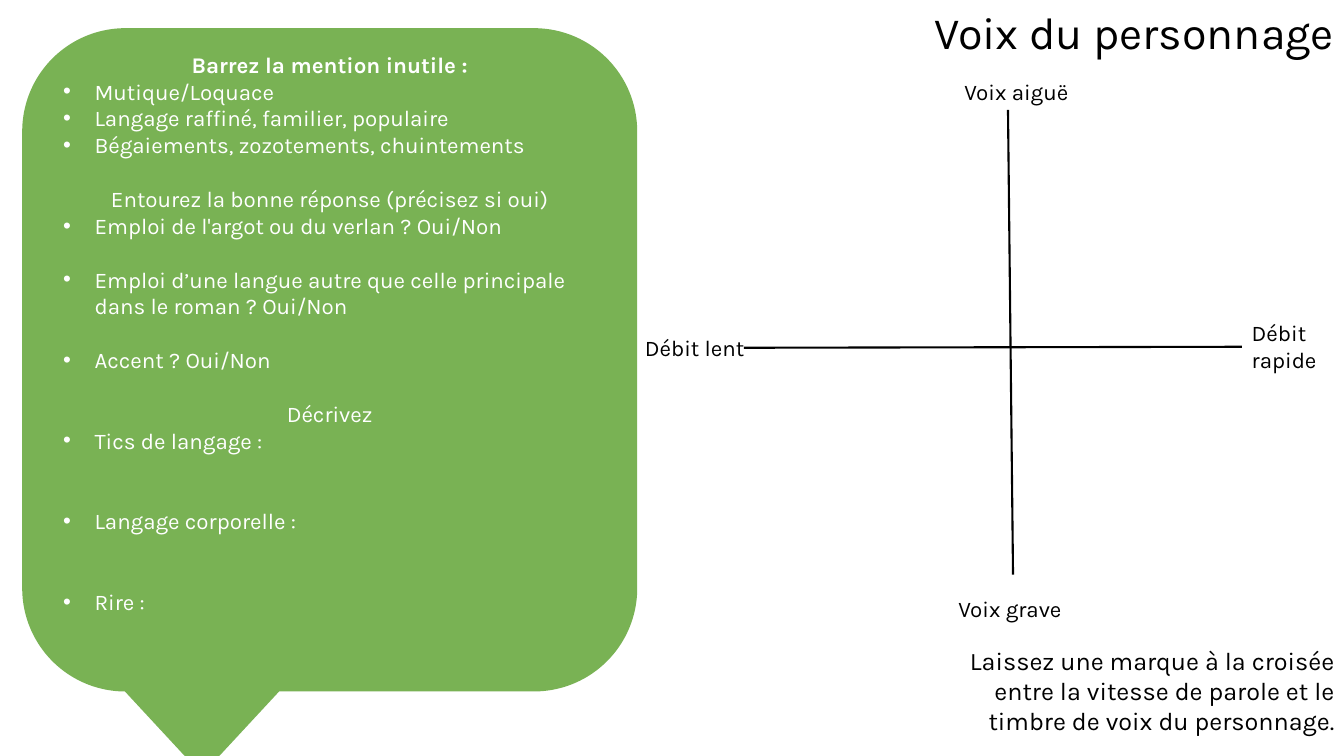
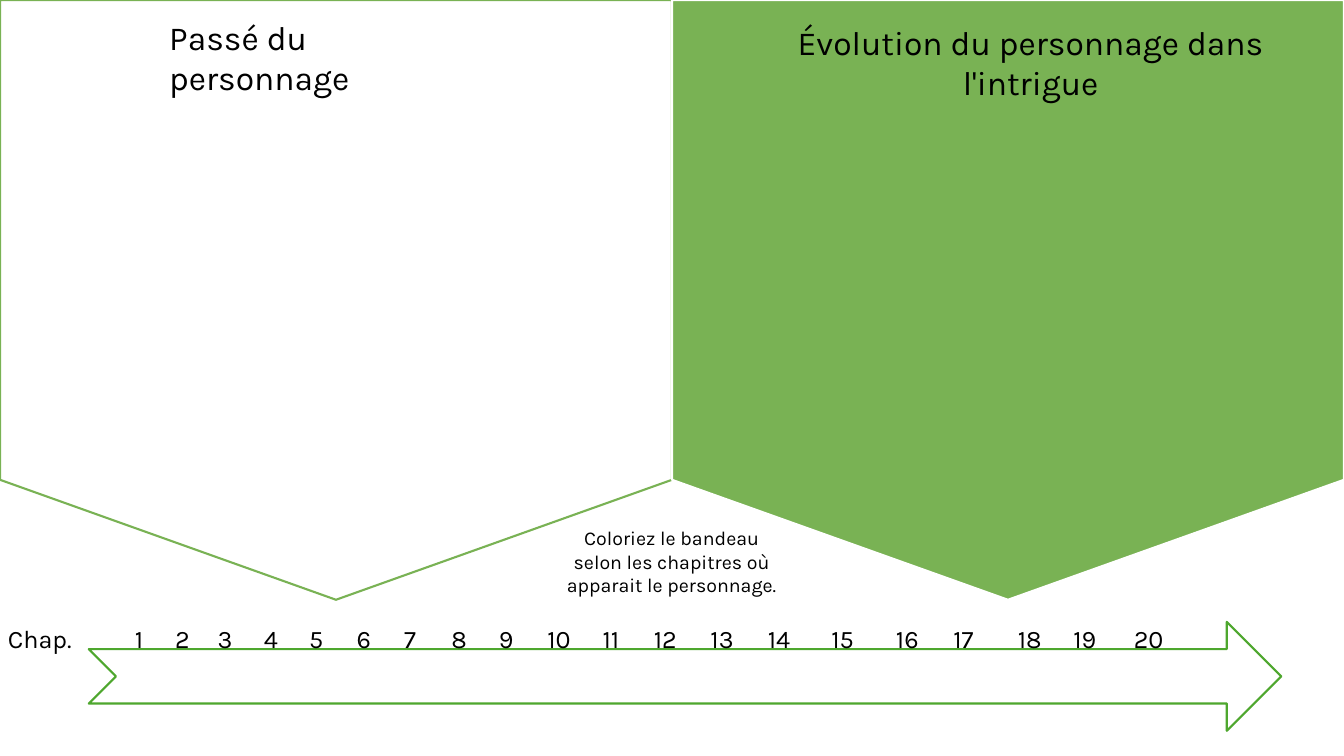
import dataclasses

import lxml.etree
import pptx
import pptx.dml.color
import pptx.enum.shapes
import pptx.enum.text
import pptx.oxml.ns
import pptx.util

Pt = pptx.util.Pt
Shape = pptx.enum.shapes.MSO_SHAPE
Align = pptx.enum.text.PP_ALIGN
Anchor = pptx.enum.text.MSO_ANCHOR


@dataclasses.dataclass(frozen=True)
class Theme:
    font: str = "Karla"
    ink: str = "000000"
    paper: str = "FFFFFF"
    green: str = "79B254"
    arrow_green: str = "4EA72E"
    title: int = 32
    heading: int = 24
    body: int = 18
    label: int = 16
    note: int = 14
    line: float = 1.5
    indent: float = 22.5
    line_pitch: float = 19.2


@dataclasses.dataclass(frozen=True)
class Box:
    left: float
    top: float
    width: float
    height: float

    def inside(self, left, top, width, height):
        return Box(self.left + left, self.top + top, width, height)

    def lengths(self):
        return Pt(self.left), Pt(self.top), Pt(self.width), Pt(self.height)


THEME = Theme()
PAGE = Box(0, 0, 960, 540)

QUESTIONS = [
    ("heading", "Barrez la mention inutile :", 0),
    ("bullet", "Mutique/Loquace", 0),
    ("bullet", "Langage raffiné, familier, populaire", 0),
    ("bullet", "Bégaiements, zozotements, chuintements", 0),
    ("center", "Entourez la bonne réponse (précisez si oui)", 1),
    ("bullet", "Emploi de l'argot ou du verlan ? Oui/Non", 0),
    ("bullet", "Emploi d’une langue autre que celle principale dans le roman ? Oui/Non", 1),
    ("bullet", "Accent ? Oui/Non", 1),
    ("center", "Décrivez", 1),
    ("bullet", "Tics de langage :", 0),
    ("bullet", "Langage corporelle :", 2),
    ("bullet", "Rire :", 2),
]
ANSWER_LINES = 2

AXIS_LABELS = [
    ("Voix aiguë", 228.2, 52.6, 88.56),
    ("Voix grave", 223.9, 421.9, 88.56),
    ("Débit rapide", 433.4, 224.6, 68.4),
    ("Débit lent", 0, 235.4, 88.56),
]

CHAPTER_LEFTS = [
    89.3, 118, 148.3, 181.4, 213.8, 247.7, 281.5, 315.4, 349.2, 383.8,
    423.4, 460, 500.4, 541.4, 586.8, 632.9, 673.9, 720, 759.6, 802.8,
]


def rgb(color):
    return pptx.dml.color.RGBColor.from_string(color)


def add_span(para, text, size, color, bold=False):
    span = para.add_run()
    span.text = text
    span.font.name = THEME.font
    span.font.size = Pt(size)
    span.font.color.rgb = rgb(color)
    span.font.bold = bold


def add_text(page, box, text, size, align=Align.LEFT):
    frame = page.shapes.add_textbox(*box.lengths()).text_frame
    frame.word_wrap = True
    para = frame.paragraphs[0]
    para.alignment = align
    add_span(para, text, size, THEME.ink)


def add_figure(page, kind, box, fill, line):
    figure = page.shapes.add_shape(kind, *box.lengths())
    figure.shadow.inherit = False
    figure.fill.solid()
    figure.fill.fore_color.rgb = rgb(fill)
    figure.line.color.rgb = rgb(line)
    figure.line.width = Pt(THEME.line)
    return figure


def add_line(page, box, start, end):
    line = page.shapes.add_connector(
        pptx.enum.shapes.MSO_CONNECTOR.STRAIGHT,
        Pt(box.left + start[0]), Pt(box.top + start[1]),
        Pt(box.left + end[0]), Pt(box.top + end[1]))
    line.line.color.rgb = rgb(THEME.ink)
    line.line.width = Pt(THEME.line)
    properties = line._element.spPr
    lxml.etree.SubElement(properties, pptx.oxml.ns.qn("a:effectLst"))


def set_bullet(para):
    properties = para._p.get_or_add_pPr()
    properties.set("marL", str(Pt(THEME.indent)))
    properties.set("indent", str(-Pt(THEME.indent)))
    font = lxml.etree.SubElement(properties, pptx.oxml.ns.qn("a:buFont"))
    font.set("typeface", "Arial")
    bullet = lxml.etree.SubElement(properties, pptx.oxml.ns.qn("a:buChar"))
    bullet.set("char", "•")


def draw_questions(page, box):
    bubble = add_figure(page, Shape.ROUNDED_RECTANGULAR_CALLOUT, box, THEME.green, THEME.green)
    frame = bubble.text_frame
    frame.word_wrap = True
    frame.vertical_anchor = Anchor.MIDDLE
    frame.margin_bottom = Pt(3.6 + ANSWER_LINES * THEME.line_pitch)
    for index, (style, text, lines_before) in enumerate(QUESTIONS):
        para = frame.add_paragraph() if index else frame.paragraphs[0]
        para.alignment = Align.LEFT if style == "bullet" else Align.CENTER
        para.space_before = Pt(lines_before * THEME.line_pitch)
        if style == "bullet":
            set_bullet(para)
        add_span(para, text, THEME.label, THEME.paper, style == "heading")


def draw_voice_axes(page, box):
    add_line(page, box, (77.8, 248.4), (433.4, 247.7))
    add_line(page, box, (270, 410.4), (266.4, 78.5))
    for text, left, top, width in AXIS_LABELS:
        add_text(page, box.inside(left, top, width, 26.6), text, THEME.label)


def draw_voice_heading(page, box):
    add_text(page, box.inside(0, 0, box.width, 46), "Voix du personnage",
             THEME.title, Align.RIGHT)
    add_text(page, box.inside(0, 457.2, box.width, 72.7),
             "Laissez une marque à la croisée entre la vitesse de parole "
             "et le timbre de voix du personnage.", THEME.body, Align.RIGHT)


def draw_panel(page, box, fill, line, title, title_box, align):
    add_figure(page, Shape.FLOWCHART_OFFPAGE_CONNECTOR, box, fill, line)
    add_text(page, box.inside(*title_box), title, THEME.heading, align)


def draw_chapter_band(page, box):
    add_figure(page, Shape.NOTCHED_RIGHT_ARROW, box.inside(63.4, 2.2, 851.8, 77.8),
               THEME.paper, THEME.arrow_green)
    add_text(page, box.inside(-1.4, 0, 64, 28.8), "Chap.", THEME.body)
    for number, left in enumerate(CHAPTER_LEFTS, 1):
        width = 26 if number < 10 else 46
        add_text(page, box.inside(left, 0, width, 28.8), str(number), THEME.body)


def draw_voice_page(page, box):
    draw_voice_heading(page, box.inside(649.4, 0, 311, 540))
    draw_questions(page, box.inside(16.6, 20.9, 437.8, 472.3))
    draw_voice_axes(page, box.inside(453.6, 0, 506.4, 450))


def draw_story_page(page, box):
    half = box.width / 2
    draw_panel(page, box.inside(0, 0, half, 428.4), THEME.paper, THEME.green,
               "Passé du personnage", (113.8, 8.6, 235.4, 36), Align.LEFT)
    draw_panel(page, box.inside(half, 0, half, 428.4), THEME.green, THEME.paper,
               "Évolution du personnage dans l'intrigue",
               (77.3, 12.2, 357.8, 65.5), Align.CENTER)
    draw_chapter_band(page, box.inside(0, 442, box.width, 80))
    add_text(page, box.inside(393.8, 372.2, 172.1, 58.3),
             "Coloriez le bandeau selon les chapitres où apparait le personnage.",
             THEME.note, Align.CENTER)


def main():
    deck = pptx.Presentation()
    deck.slide_width = Pt(PAGE.width)
    deck.slide_height = Pt(PAGE.height)
    for draw_page in (draw_voice_page, draw_story_page):
        draw_page(deck.slides.add_slide(deck.slide_layouts[6]), PAGE)
    deck.save("out.pptx")


if __name__ == "__main__":
    main()
